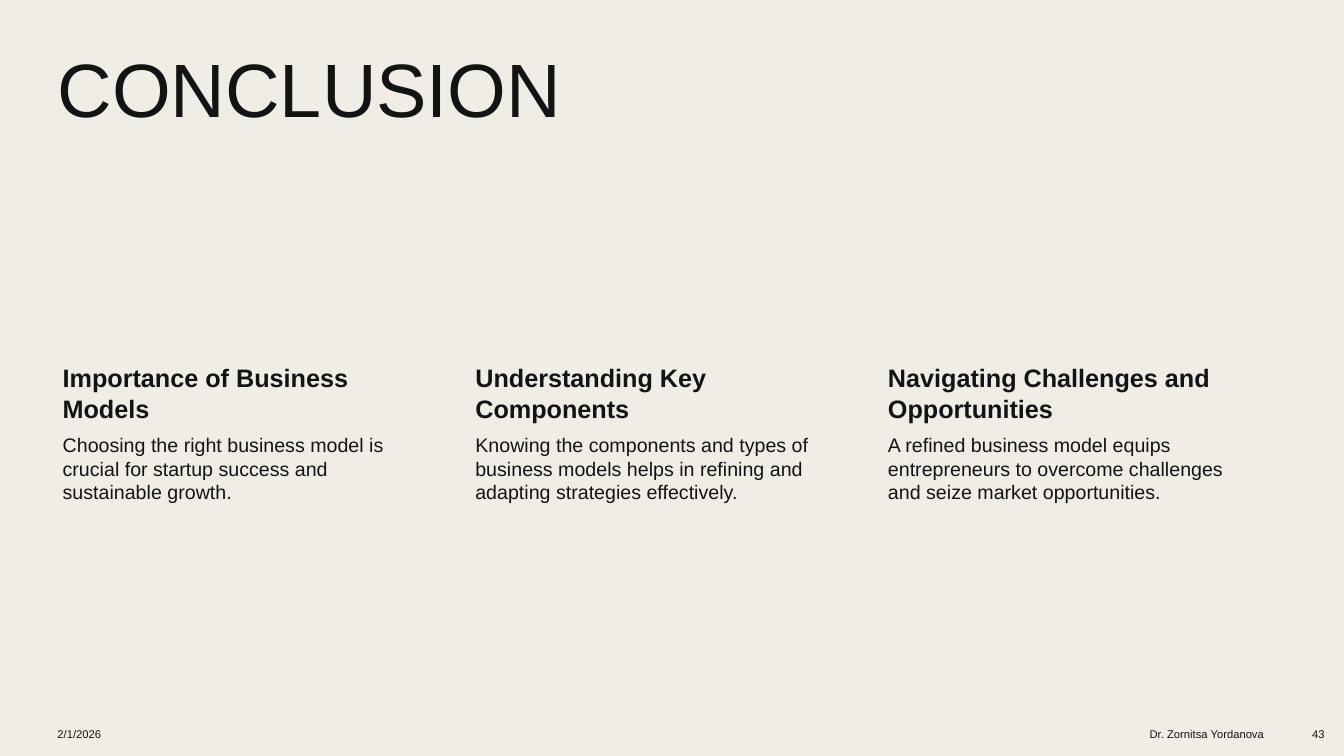
from pptx import Presentation
from pptx.dml.color import RGBColor
from pptx.enum.text import MSO_ANCHOR as Anchor, PP_ALIGN as Align
from pptx.util import Pt

TITLE = "CONCLUSION"
COLUMNS = [
    ("Importance of Business Models",
     "Choosing the right business model is crucial for startup success "
     "and sustainable growth."),
    ("Understanding Key Components",
     "Knowing the components and types of business models helps in "
     "refining and adapting strategies effectively."),
    ("Navigating Challenges and Opportunities",
     "A refined business model equips entrepreneurs to overcome "
     "challenges and seize market opportunities."),
]
# text, left, width, alignment
FOOTER = [
    ("2/1/2026", 34, 224, Align.LEFT),
    ("Dr. Zornitsa Yordanova", 700.5, 209.5, Align.RIGHT),
    ("43", 917.3, 36, Align.RIGHT),
]

THEME = {
    "font": "Arial",
    "ink": RGBColor(0x13, 0x13, 0x13),
    "paper": RGBColor(0xF0, 0xED, 0xE6),
    "title": 54, "heading": 18, "body": 14, "footer": 8,
}

LEFT, CONTENT_W = 34, 857.5
COLUMN_W = 268
COLUMN_STEP = (CONTENT_W - COLUMN_W) / (len(COLUMNS) - 1)
HEADING_TOP, HEADING_H = 257, 51
BODY_H = 172
FOOTER_TOP, FOOTER_H = 511, 27


def add_text(s, text, box, *, size, bold=False, align=Align.LEFT,
             anchor=Anchor.TOP, insets=(7.2, 3.6, 7.2, 3.6), spacing=1.0):
    """Add a one-paragraph text box; box is left, top, width, height."""
    tf = s.shapes.add_textbox(*map(Pt, box)).text_frame
    tf.word_wrap = True
    tf.vertical_anchor = anchor
    tf.margin_left, tf.margin_top, tf.margin_right, tf.margin_bottom = map(Pt, insets)
    p = tf.paragraphs[0]
    p.alignment = align
    p.line_spacing = spacing
    r = p.add_run()
    r.text = text
    r.font.name = THEME["font"]
    r.font.size = Pt(THEME[size])
    r.font.bold = bold
    r.font.color.rgb = THEME["ink"]


def main():
    prs = Presentation()
    prs.slide_width, prs.slide_height = Pt(960), Pt(540)
    s = prs.slides.add_slide(prs.slide_layouts[6])
    s.background.fill.solid()
    s.background.fill.fore_color.rgb = THEME["paper"]

    add_text(s, TITLE, (LEFT, 34, CONTENT_W, 128), size="title", spacing=0.9)
    for i, (heading, body) in enumerate(COLUMNS):
        x = LEFT + i * COLUMN_STEP
        add_text(s, heading, (x, HEADING_TOP, COLUMN_W, HEADING_H),
                 size="heading", bold=True, insets=(10.8, 2, 2, 2))
        add_text(s, body, (x, HEADING_TOP + HEADING_H, COLUMN_W, BODY_H),
                 size="body", insets=(10.8, 1.5, 1.5, 1.5))
    for text, x, width, align in FOOTER:
        add_text(s, text, (x, FOOTER_TOP, width, FOOTER_H),
                 size="footer", align=align, anchor=Anchor.MIDDLE)

    prs.save("out.pptx")


if __name__ == "__main__":
    main()
